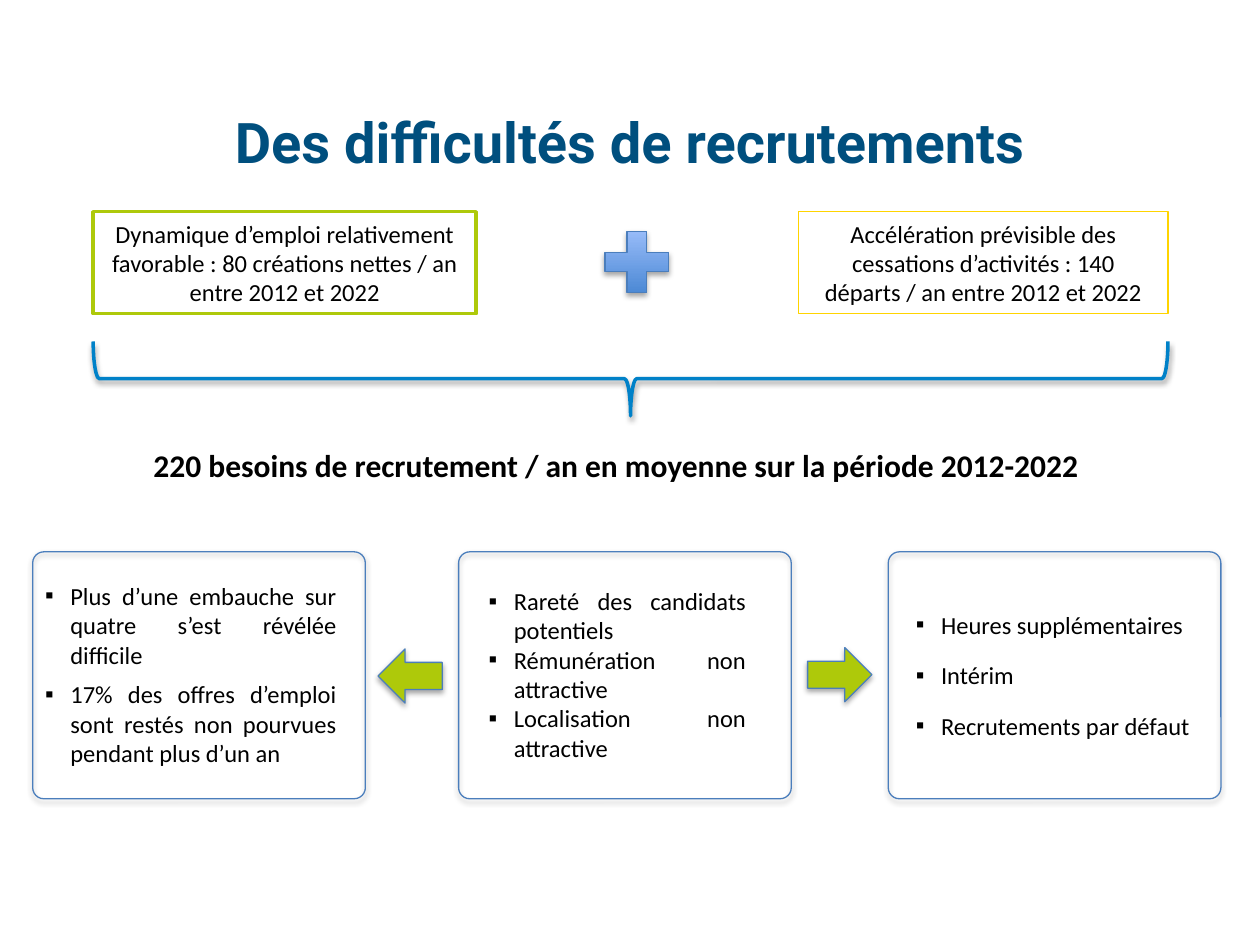
from dataclasses import dataclass

from lxml.etree import SubElement as Sub
from pptx import Presentation
from pptx.dml.color import RGBColor as Rgb
from pptx.enum.shapes import MSO_SHAPE as Kind
from pptx.enum.text import MSO_ANCHOR as Anchor, PP_ALIGN as Align
from pptx.oxml.ns import qn
from pptx.util import Pt

SCALE = 9144  # EMU per px, 100 px to the inch


@dataclass(frozen=True)
class Theme:
    head: str = "Roboto"
    body: str = "Calibri"
    big: int = 32
    mid: int = 18
    small: int = 14
    navy: str = "004F7E"
    black: str = "000000"
    white: str = "FFFFFF"
    green: str = "AEC90A"
    gold: str = "FFD400"
    blue: str = "0081C8"
    edge: str = "4B7EBC"
    low: str = "3F80CE"
    high: str = "A4C4FF"


def px(*nums):
    return [num * SCALE for num in nums]


def apply(thing, values):
    for name, value in values.items():
        setattr(thing, name, value)


class Deck:
    def __init__(self, theme, wide, tall):
        self.theme = theme
        self.file = Presentation()
        size = px(wide, tall)
        apply(self.file, {"slide_width": size[0], "slide_height": size[1]})
        self.slide = self.file.slides.add_slide(self.file.slide_layouts[6])

    def fill_in(self, shape, lines, size=None, face=None, color=None,
                bold=False, align=Align.LEFT, anchor=Anchor.TOP, after=0,
                bullet=False):
        theme, frame = self.theme, shape.text_frame
        apply(frame, {"word_wrap": True, "vertical_anchor": anchor})
        for i, line in enumerate(lines):
            para = frame.paragraphs[0] if i == 0 else frame.add_paragraph()
            para.text = line
            apply(para, {"alignment": align, "space_after": Pt(after)})
            if bullet:
                self.mark(para)
            apply(para.font, {"size": Pt(size or theme.small), "bold": bold,
                              "name": face or theme.body})
            para.font.color.rgb = Rgb.from_string(color or theme.black)

    def mark(self, para):
        props = para._p.get_or_add_pPr()
        indent = px(20)[0]
        props.set("marL", str(indent))
        props.set("indent", str(-indent))
        Sub(props, qn("a:buFont"), typeface="Arial")
        Sub(props, qn("a:buChar"), char="▪")

    def text(self, spot, lines, **style):
        box = self.slide.shapes.add_textbox(*px(*spot))
        self.fill_in(box, lines, **style)

    def shape(self, kind, spot, line, width=0.75, fill=None):
        item = self.slide.shapes.add_shape(kind, *px(*spot))
        item.shadow.inherit = False
        if fill:
            item.fill.solid()
            item.fill.fore_color.rgb = Rgb.from_string(fill)
        else:
            item.fill.background()
        item.line.color.rgb = Rgb.from_string(line)
        item.line.width = Pt(width)
        return item

    def shade(self, item, alpha=35, dist=1.8):
        effects = item._element.spPr.find(qn("a:effectLst"))
        outer = Sub(effects, qn("a:outerShdw"), blurRad=str(Pt(3.1)),
                    dist=str(Pt(dist)), dir="5400000", rotWithShape="0")
        tint = Sub(outer, qn("a:srgbClr"), val=self.theme.black)
        Sub(tint, qn("a:alpha"), val=str(alpha * 1000))

    def card(self, spot, line, width, words, fill=None):
        item = self.shape(Kind.RECTANGLE, spot, line, width, fill)
        self.fill_in(item, [words], align=Align.CENTER, anchor=Anchor.MIDDLE)

    def brace(self, spot):
        item = self.shape(Kind.LEFT_BRACE, spot, self.theme.blue, 2)
        item.rotation = 270
        self.shade(item, alpha=38, dist=1.6)

    def plus(self, spot):
        item = self.shape(Kind.MATH_PLUS, spot, self.theme.edge)
        item.fill.gradient()
        item.fill.gradient_angle = 90
        tints = self.theme.low, self.theme.high
        for stop, tint in zip(item.fill.gradient_stops, tints):
            stop.color.rgb = Rgb.from_string(tint)
        self.shade(item)

    def arrow(self, kind, spot):
        item = self.shape(kind, spot, self.theme.edge, fill=self.theme.green)
        self.shade(item)

    def panel(self, left, spot, lines, after):
        item = self.shape(Kind.ROUNDED_RECTANGLE, (left, 438, 264, 196),
                          self.theme.edge)
        item.adjustments[0] = 0.045
        self.shade(item)
        self.text(spot, lines, align=Align.JUSTIFY, after=after, bullet=True)


def main():
    theme = Theme()
    deck = Deck(theme, 1000, 750)

    # Title
    deck.text((0, 79, 1000, 66), ["Des difficultés de recrutements"],
              size=theme.big, face=theme.head, color=theme.navy, bold=True,
              align=Align.CENTER, anchor=Anchor.MIDDLE)

    # Two causes added together
    deck.card((74, 168, 304, 81), theme.green, 2,
              "Dynamique d’emploi relativement favorable : "
              "80 créations nettes / an entre 2012 et 2022", theme.white)
    deck.card((634, 168, 293, 81), theme.gold, 0.75,
              "Accélération prévisible des cessations d’activités : "
              "140 départs / an entre 2012 et 2022")
    deck.plus((471, 175, 69, 66))

    # Their sum
    deck.brace((471, -126, 59, 853))
    deck.text((112, 349, 773, 40),
              ["220 besoins de recrutement / an en moyenne "
               "sur la période 2012-2022"], size=theme.mid, bold=True)

    # Panels: left edge, text area, lines, space after
    panels = [
        (26, (26, 456, 251, 160),
         ["Plus d’une embauche sur quatre s’est révélée difficile",
          "17% des offres d’emploi sont restés non pourvues "
          "pendant plus d’un an"], 6),
        (364, (378, 460, 224, 151),
         ["Rareté des candidats potentiels",
          "Rémunération non attractive",
          "Localisation non attractive"], 0),
        (705, (717, 479, 241, 114),
         ["Heures supplémentaires", "Intérim", "Recrutements par défaut"], 12),
    ]
    for panel in panels:
        deck.panel(*panel)

    # Arrows out of the middle panel
    deck.arrow(Kind.LEFT_ARROW, (300, 515, 51, 43))
    deck.arrow(Kind.RIGHT_ARROW, (641, 514, 51, 43))

    deck.file.save("out.pptx")


if __name__ == "__main__":
    main()
